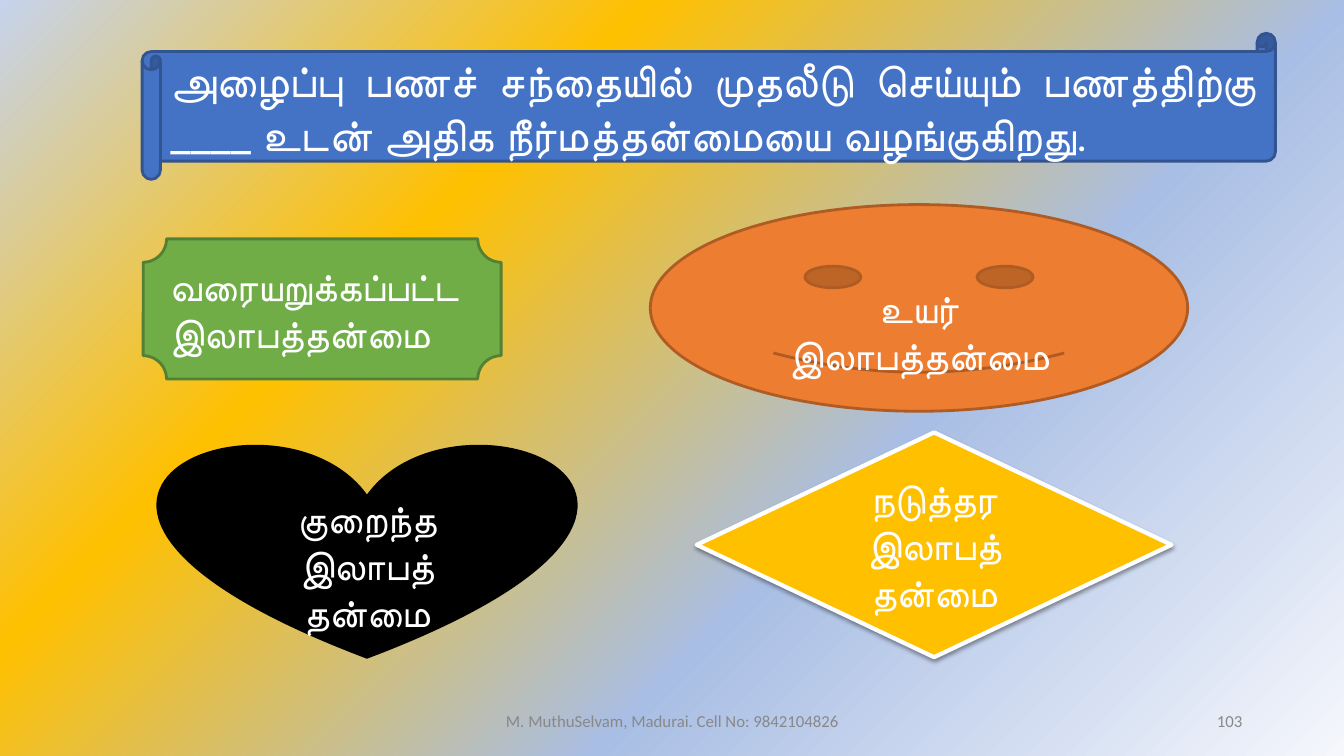
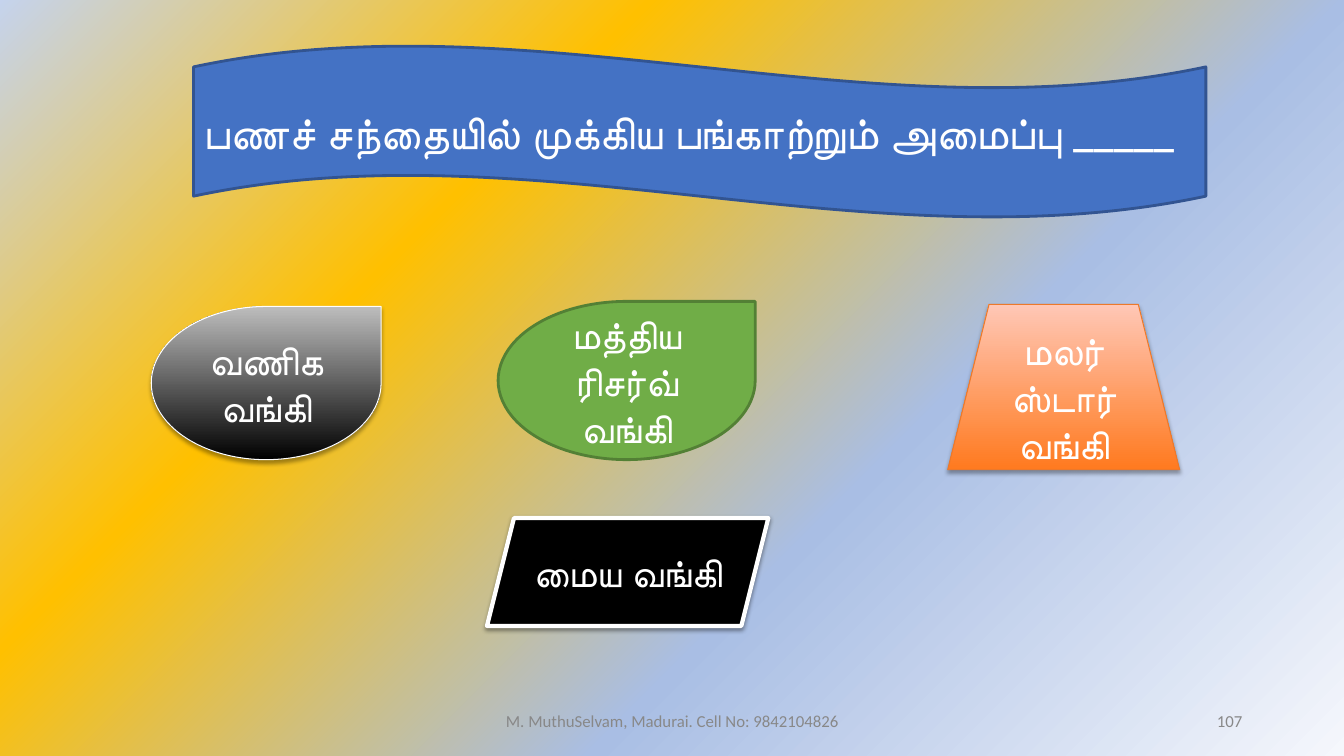
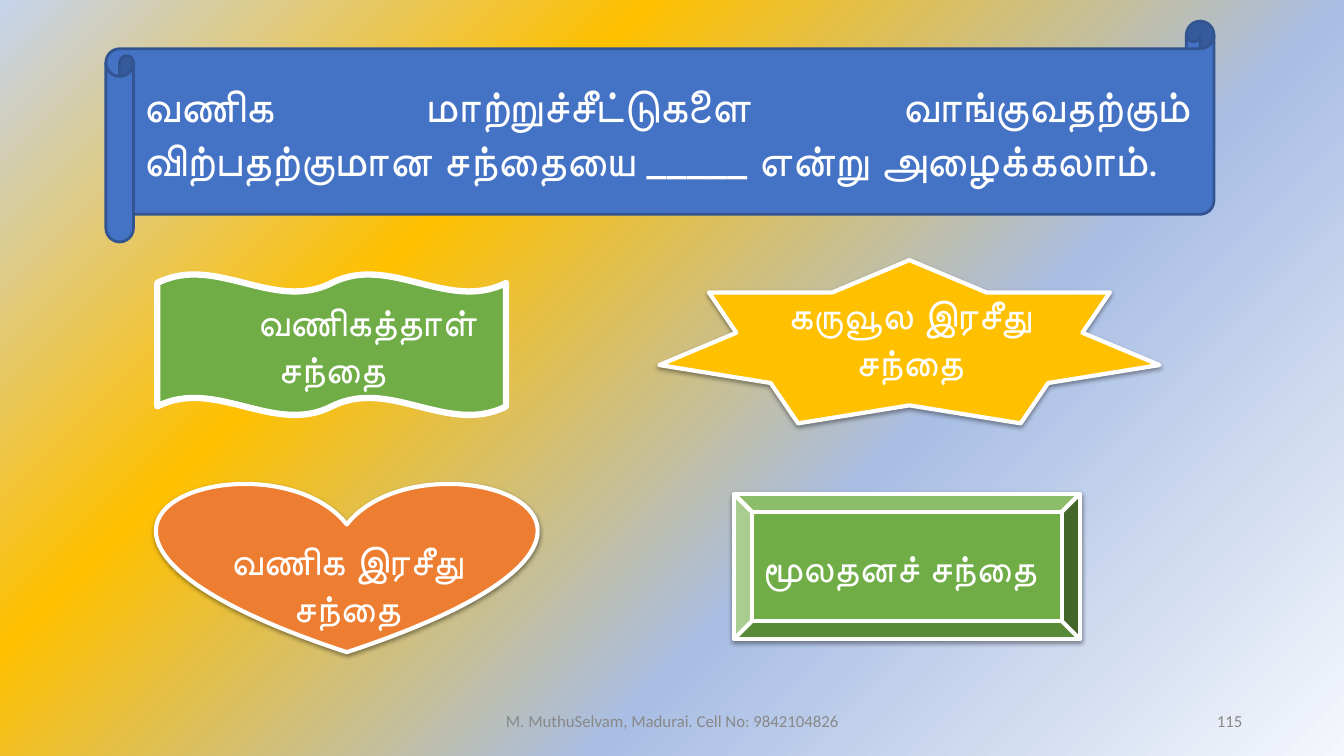
from pptx import Presentation
from pptx.dml.color import RGBColor as Rgb
from pptx.enum.shapes import MSO_SHAPE as Geo
from pptx.enum.text import MSO_ANCHOR as Anchor, PP_ALIGN as Align
from pptx.oxml import parse_xml
from pptx.oxml.ns import nsdecls, qn
from pptx.util import Inches, Pt

HUES = {
    "blue": "4472C4", "navy": "325491", "green": "70AD47", "moss": "538035",
    "orange": "ED7D31", "rust": "AF5C24", "gold": "FFC000", "black": "000000",
    "white": "FFFFFF", "grey": "888888", "silver": "BDBDBD", "flame": "FF7A1F",
    "peach": "FFC7B6", "amber": "EC792B", "mist": "F5F7FC", "sky": "A9BEE4",
    "pale": "C5D3ED",
}
STOPS = [(0, "mist"), (36, "sky"), (69, "gold"), (100, "pale")]
CARD = {"line": "white", "width": 3, "shade": (38, 3.1, 1.6)}
GLOSS = {"width": 0.75, "shade": (35, 3.1, 1.8)}
DROP = 0.52


def hue(name):
    return Rgb.from_string(HUES[name])


def put(frame, text, size=28, font="Roboto", ink="white", bold=None,
        align=Align.CENTER, top=0.05, side=0.1, indent=0):
    frame.word_wrap = True
    frame.vertical_anchor = Anchor.MIDDLE
    frame.margin_top, frame.margin_bottom = Inches(top), Inches(0.05)
    frame.margin_left = frame.margin_right = Inches(side)
    para = frame.paragraphs[0]
    para.alignment = align
    if indent:
        props = para._p.get_or_add_pPr()
        props.set("marL", "0")
        props.set("indent", str(Inches(indent)))
    run = para.add_run()
    run.text = text
    run.font.size, run.font.name, run.font.bold = Pt(size), font, bold
    run.font.color.rgb = hue(ink)


class Deck:
    def __init__(self):
        self.file = Presentation()
        self.file.slide_width, self.file.slide_height = Inches(13.33), Inches(7.5)
        self.slide = None
        self.paint()

    def paint(self):
        master = self.file.slide_master
        master.background.fill.solid()
        stops = "".join(
            f'<a:gs pos="{pos * 1000}"><a:srgbClr val="{HUES[name]}"/></a:gs>'
            for pos, name in STOPS)
        blend = parse_xml(
            f'<a:gradFill {nsdecls("a")} rotWithShape="1"><a:gsLst>{stops}</a:gsLst>'
            '<a:path path="circle"><a:fillToRect l="100000" t="100000"/></a:path>'
            '<a:tileRect r="-100000" b="-100000"/></a:gradFill>')
        props = next(master.element.iter(qn("p:bgPr")))
        props.replace(props.find(qn("a:solidFill")), blend)

    def page(self, number):
        self.slide = self.file.slides.add_slide(self.file.slide_layouts[6])
        self.note(4.42, 4.5, "M. MuthuSelvam, Madurai. Cell No: 9842104826")
        self.note(9.42, 3, str(number), align=Align.RIGHT)

    def note(self, left, width, text, **style):
        box = self.slide.shapes.add_textbox(
            Inches(left), Inches(6.95), Inches(width), Inches(0.4))
        put(box.text_frame, text, size=12, font="Calibri", ink="grey", **style)

    def shape(self, kind, area, text, fill, line, width=2, shade=None, **style):
        item = self.slide.shapes.add_shape(kind, *map(Inches, area))
        if isinstance(fill, tuple):
            item.fill.gradient()
            item.fill.gradient_angle = 90
            for stop, name in zip(item.fill.gradient_stops, fill):
                stop.color.rgb = hue(name)
            item.fill.gradient_stops[0].position = 0
            item.fill.gradient_stops[1].position = 1
        else:
            item.fill.solid()
            item.fill.fore_color.rgb = hue(fill)
        item.line.color.rgb = hue(line)
        item.line.width = Pt(width)
        item.shadow.inherit = False
        if shade:
            self.cast(item, *shade)
        put(item.text_frame, text, **style)

    def cast(self, item, alpha, blur, dist):
        item._element.spPr.find(qn("a:effectLst")).append(parse_xml(
            f'<a:outerShdw {nsdecls("a")} blurRad="{Pt(blur)}" dist="{Pt(dist)}" '
            'dir="5400000" rotWithShape="0">'
            f'<a:srgbClr val="{HUES["black"]}"><a:alpha val="{alpha * 1000}"/>'
            '</a:srgbClr></a:outerShdw>'))

    def banner(self, kind, area, text, align=Align.JUSTIFY):
        self.shape(kind, area, text, "blue", "navy", size=32, align=align)


def main():
    deck = Deck()

    deck.page(103)
    deck.banner(Geo.HORIZONTAL_SCROLL, (1.41, 0.33, 11.24, 1.45),
                "அழைப்பு பணச் சந்தையில் முதலீடு செய்யும் பணத்திற்கு ____ உடன் "
                "அதிக நீர்மத்தன்மையை வழங்குகிறது.")
    deck.shape(Geo.PLAQUE, (1.42, 2.37, 3.55, 1.39), "வரையறுக்கப்பட்ட இலாபத்தன்மை",
               "green", "moss", bold=True, align=Align.JUSTIFY)
    deck.shape(Geo.SMILEY_FACE, (6.45, 2.03, 5.33, 2.05), "உயர் இலாபத்தன்மை",
               "orange", "rust", top=DROP, side=0.3)
    deck.shape(Geo.HEART, (1.58, 4.4, 4.12, 2.12), "குறைந்த இலாபத் தன்மை",
               "black", "black", top=DROP)
    deck.shape(Geo.DIAMOND, (6.91, 4.29, 4.71, 2.23), "நடுத்தர இலாபத் தன்மை",
               "gold", **CARD)

    deck.page(107)
    deck.banner(Geo.WAVE, (1.92, 0.45, 10.04, 1.71),
                "பணச் சந்தையில் முக்கிய பங்காற்றும் அமைப்பு _____", Align.LEFT)
    deck.shape(Geo.TEAR, (1.5, 3.04, 2.28, 1.52), "வணிக வங்கி",
               ("black", "silver"), "white", bold=True, **GLOSS)
    deck.shape(Geo.TRAPEZOID, (9.4, 3.02, 2.3, 1.64), "மலர் ஸ்டார் வங்கி",
               ("flame", "peach"), "amber", **GLOSS)
    deck.shape(Geo.PARALLELOGRAM, (4.83, 5.14, 2.79, 1.07), "மைய வங்கி",
               "black", **CARD)
    deck.shape(Geo.TEAR, (4.94, 2.99, 2.55, 1.57), "மத்திய ரிசர்வ் வங்கி",
               "green", "moss")

    deck.page(115)
    deck.shape(Geo.HEART, (1.56, 4.78, 3.76, 1.69), "வணிக இரசீது சந்தை",
               "orange", top=DROP, **CARD)
    deck.shape(Geo.STAR_7_POINT, (6.54, 2.58, 4.96, 1.62), "கருவூல இரசீது சந்தை",
               "gold", **CARD)
    deck.shape(Geo.BEVEL, (7.28, 4.9, 3.43, 1.44), "மூலதனச் சந்தை",
               "green", align=Align.LEFT, **CARD)
    deck.shape(Geo.DOUBLE_WAVE, (1.56, 2.72, 3.46, 1.4), "வணிகத்தாள் சந்தை",
               "green", "white", width=4.5, indent=0.7)
    deck.banner(Geo.HORIZONTAL_SCROLL, (1.05, 0.21, 10.99, 2.19),
                "வணிக மாற்றுச்சீட்டுகளை வாங்குவதற்கும் விற்பதற்குமான சந்தையை _____ "
                "என்று அழைக்கலாம்.")

    deck.file.save("out.pptx")


if __name__ == "__main__":
    main()
